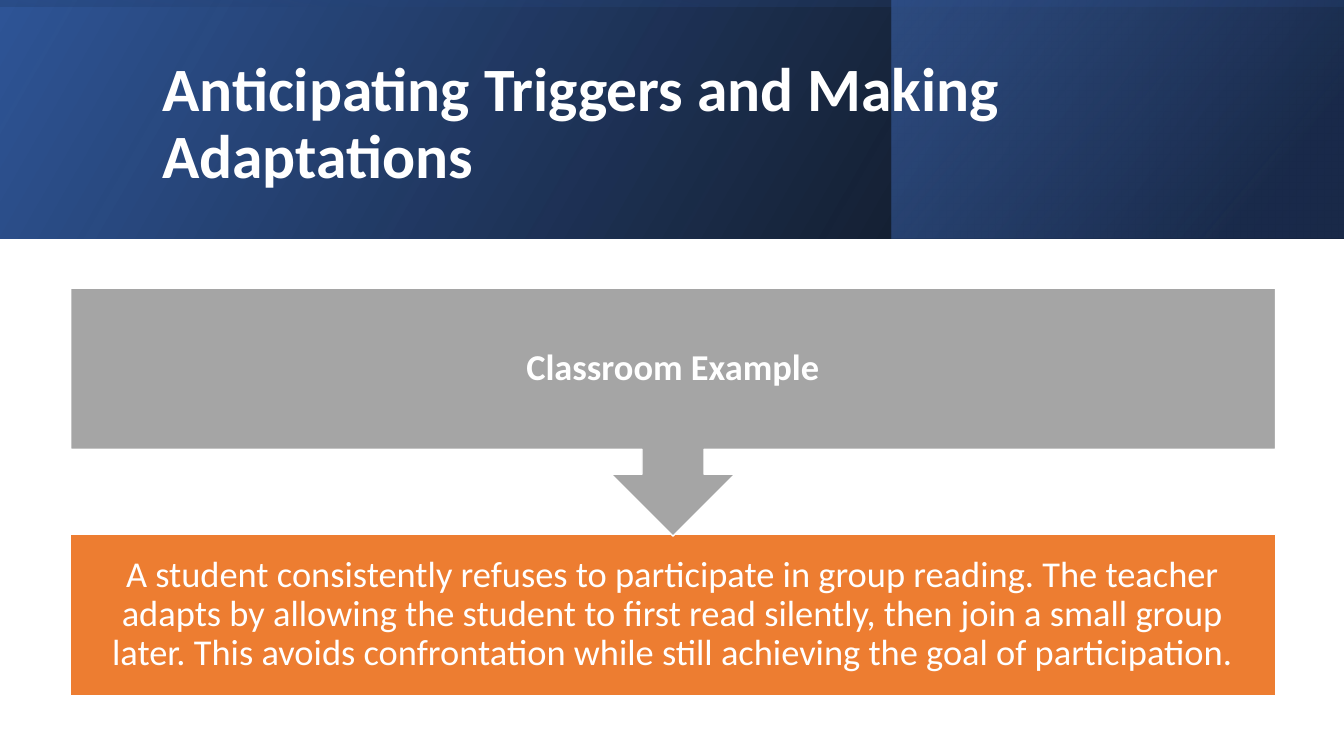
from dataclasses import dataclass

from lxml import etree
from pptx import Presentation
from pptx.dml.color import RGBColor
from pptx.enum.shapes import MSO_SHAPE
from pptx.enum.text import MSO_ANCHOR, PP_ALIGN
from pptx.oxml.ns import qn
from pptx.util import Inches, Pt

RECTANGLE = MSO_SHAPE.RECTANGLE
DOWN_CALLOUT = MSO_SHAPE.DOWN_ARROW_CALLOUT
MIDDLE = MSO_ANCHOR.MIDDLE
LEFT = PP_ALIGN.LEFT
CENTER = PP_ALIGN.CENTER
TITLE_ONLY = 5


@dataclass(frozen=True)
class Theme:
    font: str = "Calibri"
    white: str = "FFFFFF"
    black: str = "000000"
    blue: str = "2F5597"
    navy: str = "203864"
    sky: str = "4472C4"
    gray: str = "A5A5A5"
    orange: str = "ED7D31"
    title_size: int = 44
    body_size: int = 26
    line_spacing: float = 0.9


THEME = Theme()
SLIDE_WIDTH = 13.33
BANNER_HEIGHT = 2.37
PANEL_LEFT = 8.84
STEP_LEFT, STEP_WIDTH = 0.7, 11.95


def add_shape(slide, kind, left, top, width, height):
    shape = slide.shapes.add_shape(
        kind, Inches(left), Inches(top), Inches(width), Inches(height)
    )
    shape.shadow.inherit = False
    return shape


def add_gradient_band(slide, box, stops, angle, rotation=0):
    shape = add_shape(slide, RECTANGLE, *box)
    shape.rotation = rotation
    shape.line.fill.background()
    shape._element.spPr.find(qn("a:xfrm")).set("flipH", "1")
    shape.fill.gradient()
    shape.fill.gradient_angle = 360 - angle
    for stop, (position, color, opacity) in zip(shape.fill.gradient_stops, stops):
        stop.position = position / 100
        stop.color.rgb = RGBColor.from_string(color)
    color_elements = shape._element.spPr.iter(qn("a:srgbClr"))
    for element, (position, color, opacity) in zip(color_elements, stops):
        etree.SubElement(element, qn("a:alpha")).set("val", str(opacity * 1000))


def write_text(shape, text, size, alignment, bold):
    frame = shape.text_frame
    frame.text = text
    frame.word_wrap = True
    frame.vertical_anchor = MIDDLE
    paragraph = frame.paragraphs[0]
    paragraph.alignment = alignment
    paragraph.line_spacing = THEME.line_spacing
    paragraph.font.name = THEME.font
    paragraph.font.size = Pt(size)
    paragraph.font.bold = bold
    paragraph.font.color.rgb = RGBColor.from_string(THEME.white)


def add_step(slide, kind, top, height, color, text, bold=False):
    shape = add_shape(slide, kind, STEP_LEFT, top, STEP_WIDTH, height)
    shape.fill.solid()
    shape.fill.fore_color.rgb = RGBColor.from_string(color)
    shape.line.color.rgb = RGBColor.from_string(THEME.white)
    shape.line.width = Pt(1)
    frame = shape.text_frame
    frame.margin_left = frame.margin_right = Inches(0.2)
    frame.margin_top = frame.margin_bottom = Inches(0.2)
    write_text(shape, text, THEME.body_size, CENTER, bold)


def add_banner(slide):
    add_gradient_band(
        slide,
        (0, 0, SLIDE_WIDTH, BANNER_HEIGHT),
        [(0, THEME.black, 96), (100, THEME.blue, 100)],
        330,
    )
    add_gradient_band(
        slide,
        (PANEL_LEFT, 0, SLIDE_WIDTH - PANEL_LEFT, BANNER_HEIGHT),
        [(19, THEME.navy, 68), (100, THEME.sky, 48)],
        320,
    )
    offset = (SLIDE_WIDTH - BANNER_HEIGHT) / 2
    add_gradient_band(
        slide,
        (offset, -offset, BANNER_HEIGHT, SLIDE_WIDTH),
        [(23, THEME.blue, 16), (99, THEME.black, 45)],
        350,
        rotation=270,
    )


def place_title(slide, text):
    title = slide.shapes.title
    title.left, title.top = Inches(1.51), Inches(0.38)
    title.width, title.height = Inches(10.63), Inches(1.72)
    write_text(title, text, THEME.title_size, LEFT, True)
    slide.shapes._spTree.append(title._element)


def main():
    presentation = Presentation()
    presentation.slide_width = Inches(SLIDE_WIDTH)
    presentation.slide_height = Inches(7.5)
    slide = presentation.slides.add_slide(presentation.slide_layouts[TITLE_ONLY])
    add_banner(slide)
    place_title(slide, "Anticipating Triggers and Making Adaptations")
    add_step(
        slide, RECTANGLE, 5.3, 1.6, THEME.orange,
        "A student consistently refuses to participate in group reading. "
        "The teacher adapts by allowing the student to first read silently, "
        "then join a small group later. This avoids confrontation while still "
        "achieving the goal of participation.",
    )
    add_step(
        slide, DOWN_CALLOUT, 2.86, 2.46, THEME.gray, "Classroom Example", bold=True
    )
    presentation.save("out.pptx")


if __name__ == "__main__":
    main()
